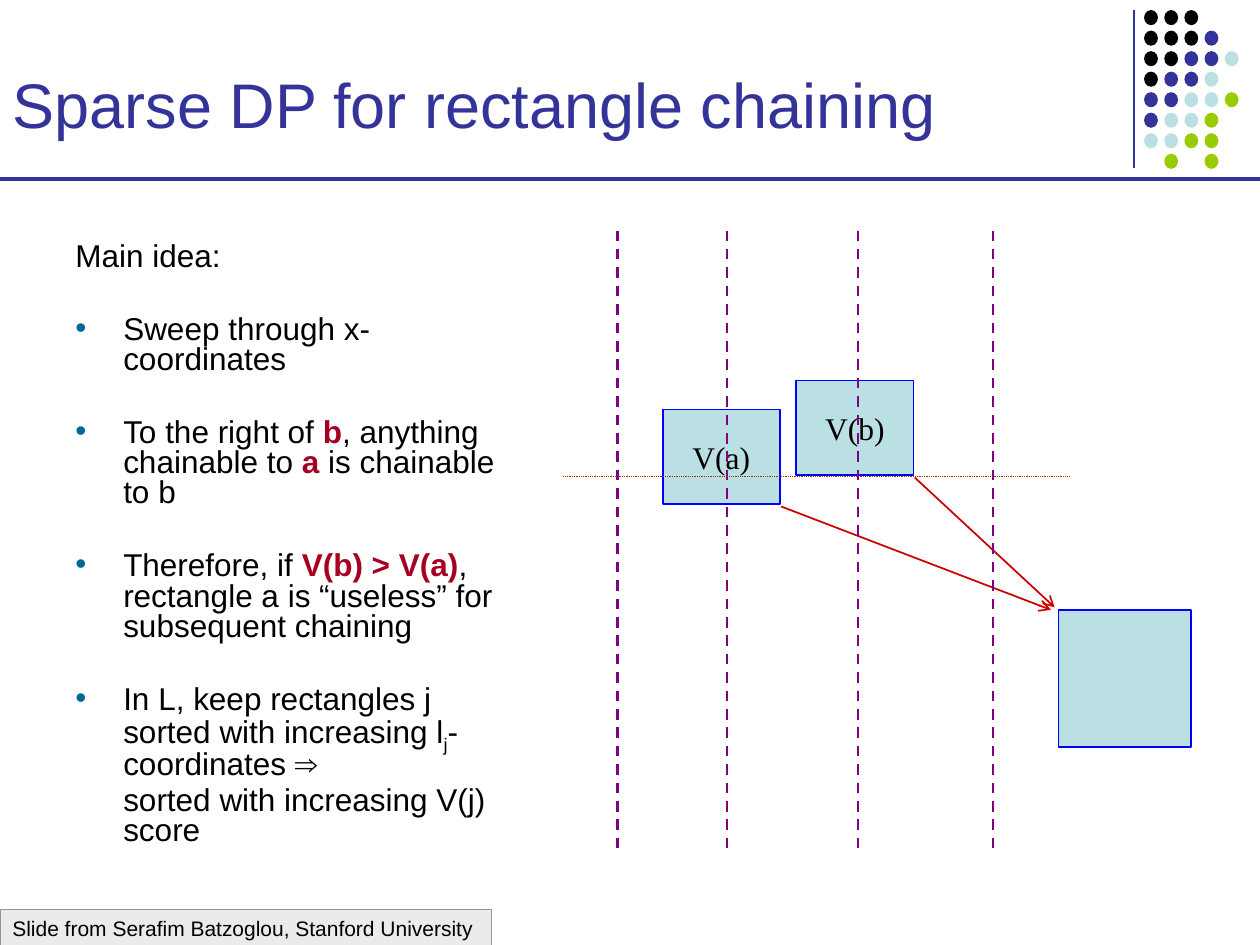
from dataclasses import dataclass

from pptx import Presentation
from pptx.dml.color import RGBColor
from pptx.enum.dml import MSO_LINE
from pptx.enum.shapes import MSO_CONNECTOR, MSO_SHAPE
from pptx.enum.text import MSO_ANCHOR, MSO_AUTO_SIZE, PP_ALIGN
from pptx.oxml.ns import qn
from pptx.util import Inches, Pt
from lxml.etree import SubElement


@dataclass(frozen=True)
class Theme:
    """Colours, fonts and type sizes of the slide."""
    ink: str = "000000"
    navy: str = "333399"
    pale: str = "BBE0E3"
    lime: str = "99CC00"
    blue: str = "0000FF"
    red: str = "CC0000"
    plum: str = "800080"
    brown: str = "993300"
    stress: str = "A50021"
    bullet: str = "006699"
    silver: str = "C0C0C0"
    grey: str = "969696"
    sans: str = "Arial"
    serif: str = "Times New Roman"
    head: int = 36
    body: int = 18
    note: int = 12


class Deck:
    """Holds the theme and the current slide."""

    def __init__(self, theme, show):
        self.theme = theme
        self.slide = show.slides.add_slide(show.slide_layouts[5])
        self.shapes = self.slide.shapes

    def place(self, shape, left, top, width, height):
        """Move and size a shape, in inches."""
        shape.left, shape.top = Inches(left), Inches(top)
        shape.width, shape.height = Inches(width), Inches(height)

    def style(self, run, size, face, color, bold=False):
        """Set the font of one run."""
        font = run.font
        font.size, font.name, font.bold = Pt(size), face, bold
        font.color.rgb = RGBColor.from_string(color)

    def title(self, text, *box):
        """Fill and place the title placeholder."""
        shape = self.shapes.title
        self.place(shape, *box)
        frame = shape.text_frame
        frame.text = text
        frame.auto_size = MSO_AUTO_SIZE.NONE
        frame.vertical_anchor = MSO_ANCHOR.BOTTOM
        frame.paragraphs[0].alignment = PP_ALIGN.LEFT
        self.style(frame.paragraphs[0].runs[0], self.theme.head,
                   self.theme.sans, self.theme.navy)

    def line(self, x1, y1, x2, y2, color, width, dash=None, arrow=False):
        """Draw a straight line or arrow."""
        wire = self.shapes.add_connector(
            MSO_CONNECTOR.STRAIGHT, *map(Inches, (x1, y1, x2, y2)))
        wire.line.color.rgb = RGBColor.from_string(color)
        wire.line.width = Pt(width)
        if dash:
            wire.line.dash_style = dash
        if arrow:
            SubElement(wire.line._get_or_add_ln(), qn("a:tailEnd"), type="arrow")
        SubElement(wire.element.spPr, qn("a:effectLst"))

    def shape(self, kind, box, fill, edge=None, width=1):
        """Draw a filled shape with an optional outline."""
        shape = self.shapes.add_shape(kind, *map(Inches, box))
        shape.shadow.inherit = False
        shape.fill.solid()
        shape.fill.fore_color.rgb = RGBColor.from_string(fill)
        if edge:
            shape.line.color.rgb = RGBColor.from_string(edge)
            shape.line.width = Pt(width)
        else:
            shape.line.fill.background()
        return shape

    def label(self, shape, text, size, face, align=PP_ALIGN.CENTER):
        """Write one line of text in a shape."""
        frame = shape.text_frame
        frame.text = text
        frame.word_wrap = False
        frame.vertical_anchor = MSO_ANCHOR.MIDDLE
        frame.paragraphs[0].alignment = align
        self.style(frame.paragraphs[0].runs[0], size, face, self.theme.ink)

    def dots(self, rows, left, top, step, drop):
        """Draw a grid of dots, one letter per dot."""
        theme = self.theme
        hues = {"k": theme.ink, "n": theme.navy, "p": theme.pale, "l": theme.lime}
        for i, row in enumerate(rows):
            for j, key in enumerate(row):
                if key in hues:
                    box = (left + j * step, top + i * drop, 0.11, 0.12)
                    self.shape(MSO_SHAPE.OVAL, box, hues[key])

    def badge(self, text, *box):
        """Draw the see-through source note."""
        theme = self.theme
        shape = self.shape(MSO_SHAPE.RECTANGLE, box, theme.silver, theme.grey, 0.75)
        tint = shape.element.spPr.find(qn("a:solidFill"))[0]
        SubElement(tint, qn("a:alpha"), val="30000")
        self.label(shape, text, theme.note, theme.sans, PP_ALIGN.LEFT)

    def points(self, items, *box):
        """Write paragraphs given as (bulleted, space before, parts)."""
        frame = self.shapes.add_textbox(*map(Inches, box)).text_frame
        frame.word_wrap = True
        for i, (dotted, space, parts) in enumerate(items):
            para = frame.add_paragraph() if i else frame.paragraphs[0]
            para.line_spacing = 0.8
            para.space_before = Pt(space)
            self.indent(para, dotted, hang=dotted or i == 0)
            for text, kind in parts:
                run = para.add_run()
                run.text = text
                strong = kind == "bold"
                color = self.theme.stress if strong else self.theme.ink
                self.style(run, self.theme.body, self.theme.sans, color, strong)
                if kind == "sub":
                    run.font._element.set("baseline", "-25000")

    def indent(self, para, dotted, hang):
        """Set the indent and bullet of a paragraph."""
        props = para._p.get_or_add_pPr()
        depth = Inches(0.38)
        props.set("marL", str(depth))
        props.set("indent", str(-depth if hang else 0))
        if dotted:
            tint = SubElement(props, qn("a:buClr"))
            SubElement(tint, qn("a:srgbClr"), val=self.theme.bullet)
            SubElement(props, qn("a:buFont"), typeface=self.theme.sans)
            SubElement(props, qn("a:buChar"), char="•")
        else:
            SubElement(props, qn("a:buNone"))


def main():
    """Build and save the slide."""
    show = Presentation()
    show.slide_width, show.slide_height = Inches(10), Inches(7.5)
    theme = Theme()
    deck = Deck(theme, show)

    deck.line(9, 0.08, 9, 1.33, theme.navy, 1.5)
    rows = ["kkk", "kkkn", "kknnp", "knnp", "nnppl", "nppl", "ppll", " l l"]
    deck.dots(rows, 9.08, 0.08, 0.16, 1.14 / 7)
    deck.line(0, 1.42, 10, 1.42, theme.navy, 2.25)
    deck.badge("Slide from Serafim Batzoglou, Stanford University",
               0, 7.22, 3.9, 0.3)
    deck.title("Sparse DP for rectangle chaining", 0, 0.17, 8.92, 1)

    near, far = 3.6, 24.4
    deck.points([
        (False, near, [("Main idea:", "")]),
        (True, far, [("Sweep through x-coordinates", "")]),
        (True, far, [("To the right of ", ""), ("b", "bold"),
                     (", anything chainable to ", ""), ("a", "bold"),
                     (" is chainable to b", "")]),
        (True, far, [("Therefore, if ", ""), ("V(b) > V(a)", "bold"),
                     (", rectangle a is “useless” for subsequent chaining", "")]),
        (True, far, [("In L, keep rectangles j sorted with increasing l", ""),
                     ("j", "sub"), ("-coordinates ⇒", "")]),
        (False, near, [("sorted with increasing V(j) score", "")]),
    ], 0.5, 1.88, 3.55, 5.37)

    deck.shape(MSO_SHAPE.RECTANGLE, (8.4, 4.84, 1.05, 1.09), theme.pale, theme.blue)
    for text, left, top, tip in (("V(b)", 6.32, 3.02, (8.37, 4.82)),
                                 ("V(a)", 5.26, 3.25, (8.34, 4.84))):
        box = (left, top, 0.93, 0.75)
        tile = deck.shape(MSO_SHAPE.RECTANGLE, box, theme.pale, theme.blue)
        deck.label(tile, text, theme.body, theme.serif)
        deck.line(left + 0.94, top + 0.77, *tip, theme.red, 1, arrow=True)
    for x in (4.9, 5.77, 6.81, 7.88):
        deck.line(x, 1.83, x, 6.73, theme.plum, 1.5, MSO_LINE.DASH)
    deck.line(4.47, 3.78, 8.49, 3.78, theme.brown, 0.5, MSO_LINE.ROUND_DOT)

    show.save("out.pptx")


if __name__ == "__main__":
    main()
